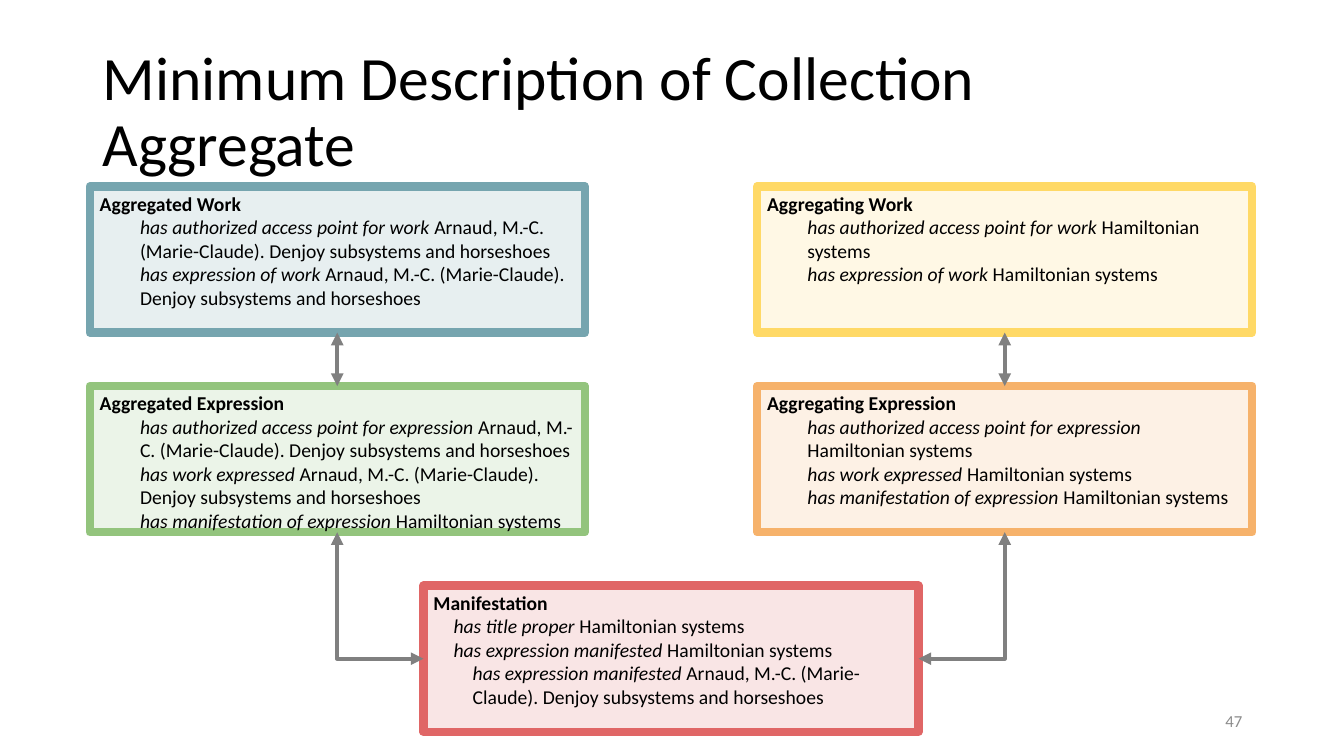
from lxml import etree
from pptx import Presentation
from pptx.dml.color import RGBColor
from pptx.enum.shapes import MSO_CONNECTOR as LINK, MSO_SHAPE
from pptx.enum.text import MSO_ANCHOR as ANCHOR, PP_ALIGN as ALIGN
from pptx.oxml.ns import qn
from pptx.util import Inches, Pt

# Grid of half-overlapping columns and equal rows, in inches
LEFT, TOP = 0.89, 1.85
COL_STEP, ROW_STEP = 3.31, 1.98
BOX_W, BOX_H = 4.91, 1.45
FONT = "Calibri"

DENJOY = "Arnaud, M.-C. (Marie-Claude). Denjoy subsystems and horseshoes"
HAMILTON = "Hamiltonian systems"

# Column, row, fill, border, heading, then (indent, relationship, value)
ENTITIES = {
    "work": (0, 0, "D0E0E3", "76A5AF", "Aggregated Work", [
        (0.4, "has authorized access point for work", DENJOY),
        (0.4, "has expression of work", DENJOY)]),
    "aggregating work": (2, 0, "FFF2CC", "FFD966", "Aggregating Work", [
        (0.4, "has authorized access point for work", HAMILTON),
        (0.4, "has expression of work", HAMILTON)]),
    "expression": (0, 1, "D9EAD3", "93C47D", "Aggregated Expression", [
        (0.4, "has authorized access point for expression", DENJOY),
        (0.4, "has work expressed", DENJOY),
        (0.4, "has manifestation of expression", HAMILTON)]),
    "aggregating expression": (2, 1, "FCE5CD", "F6B26B", "Aggregating Expression", [
        (0.4, "has authorized access point for expression", HAMILTON),
        (0.4, "has work expressed", HAMILTON),
        (0.4, "has manifestation of expression", HAMILTON)]),
    "manifestation": (1, 2, "F4CCCC", "E06666", "Manifestation", [
        (0.2, "has title proper", HAMILTON),
        (0.2, "has expression manifested", HAMILTON),
        (0.39, "has expression manifested", DENJOY)]),
}


def color(hex_code):
    return RGBColor.from_string(hex_code)


def style(run, size, hex_code="000000", bold=False, italic=False):
    run.font.name, run.font.size = FONT, Pt(size)
    run.font.bold, run.font.italic = bold, italic
    run.font.color.rgb = color(hex_code)


def add_label(slide, place, text, size, hex_code, align=ALIGN.LEFT, spacing=1.0):
    frame = slide.shapes.add_textbox(*map(Inches, place)).text_frame
    frame.word_wrap = True
    frame.vertical_anchor = ANCHOR.MIDDLE
    frame.text = text
    line = frame.paragraphs[0]
    line.alignment, line.line_spacing = align, spacing
    style(line.runs[0], size, hex_code)


def add_entity(slide, col, row, fill, border, heading, details):
    box = slide.shapes.add_shape(
        MSO_SHAPE.RECTANGLE, Inches(LEFT + col * COL_STEP),
        Inches(TOP + row * ROW_STEP), Inches(BOX_W), Inches(BOX_H))
    box.shadow.inherit = False
    box.fill.solid()
    box.fill.fore_color.rgb = color(fill)
    # Half-transparent fill
    tint = box.fill._xPr.find(qn("a:solidFill"))[0]
    etree.SubElement(tint, qn("a:alpha")).set("val", "50000")
    box.line.color.rgb = color(border)
    box.line.width = Pt(6)

    frame = box.text_frame
    frame.word_wrap = True
    frame.vertical_anchor = ANCHOR.TOP
    frame.text = heading
    style(frame.paragraphs[0].runs[0], 14, bold=True)
    for indent, relationship, value in details:
        detail = frame.add_paragraph()
        detail._p.get_or_add_pPr().set("marL", str(Inches(indent)))
        for text, italic in ((relationship + " ", True), (value, False)):
            run = detail.add_run()
            run.text = text
            style(run, 14, italic=italic)
    for paragraph in frame.paragraphs:
        paragraph.alignment = ALIGN.LEFT
    return box


def add_arrow(slide, kind, start, end):
    arrow = slide.shapes.add_connector(kind, *map(int, start + end))
    arrow.line.color.rgb = color("808080")
    arrow.line.width = Pt(3)
    outline = arrow.line._get_or_add_ln()
    for tip in ("a:headEnd", "a:tailEnd"):
        etree.SubElement(outline, qn(tip)).set("type", "triangle")
    etree.SubElement(arrow._element.spPr, qn("a:effectLst"))
    return arrow


def link_down(slide, upper, lower):
    start = (upper.left + upper.width / 2, upper.top + upper.height)
    arrow = add_arrow(slide, LINK.STRAIGHT, start, (start[0], lower.top))
    arrow.begin_connect(upper, 2)
    arrow.end_connect(lower, 0)


def link_corner(slide, upper, target):
    """Run down from upper, then sideways into the near edge of target."""
    x, y = upper.left + upper.width / 2, upper.top + upper.height
    rightward = upper.left < target.left
    end_x = target.left if rightward else target.left + target.width
    end_y = target.top + target.height / 2
    # The frame is laid out before its quarter turn, so the sides swap
    mid_x, mid_y = (x + end_x) / 2, (y + end_y) / 2
    half_w, half_h = (end_y - y) / 2, abs(end_x - x) / 2
    if rightward:
        half_w = -half_w
    arrow = add_arrow(slide, LINK.ELBOW, (mid_x - half_w, mid_y - half_h),
                      (mid_x + half_w, mid_y + half_h))
    shape_props = arrow._element.spPr
    shape_props.find(qn("a:prstGeom")).set("prst", "bentConnector2")
    turn = 270 if rightward else 90
    shape_props.find(qn("a:xfrm")).set("rot", str(turn * 60000))


def main():
    deck = Presentation()
    deck.slide_width, deck.slide_height = Inches(13.33), Inches(7.5)
    slide = deck.slides.add_slide(deck.slide_layouts[6])

    # Title and page number
    add_label(slide, (0.92, 0.4, 11.45, 1.45),
              "Minimum Description of Collection Aggregate", 44, "000000", spacing=0.9)
    add_label(slide, (9.42, 6.95, 3, 0.4), "47", 12, "8C8C8C", ALIGN.RIGHT)

    # Entities
    boxes = {name: add_entity(slide, *entity) for name, entity in ENTITIES.items()}

    # Relationships
    for prefix in ("", "aggregating "):
        expression = boxes[prefix + "expression"]
        link_down(slide, boxes[prefix + "work"], expression)
        link_corner(slide, expression, boxes["manifestation"])

    deck.save("out.pptx")


if __name__ == "__main__":
    main()
